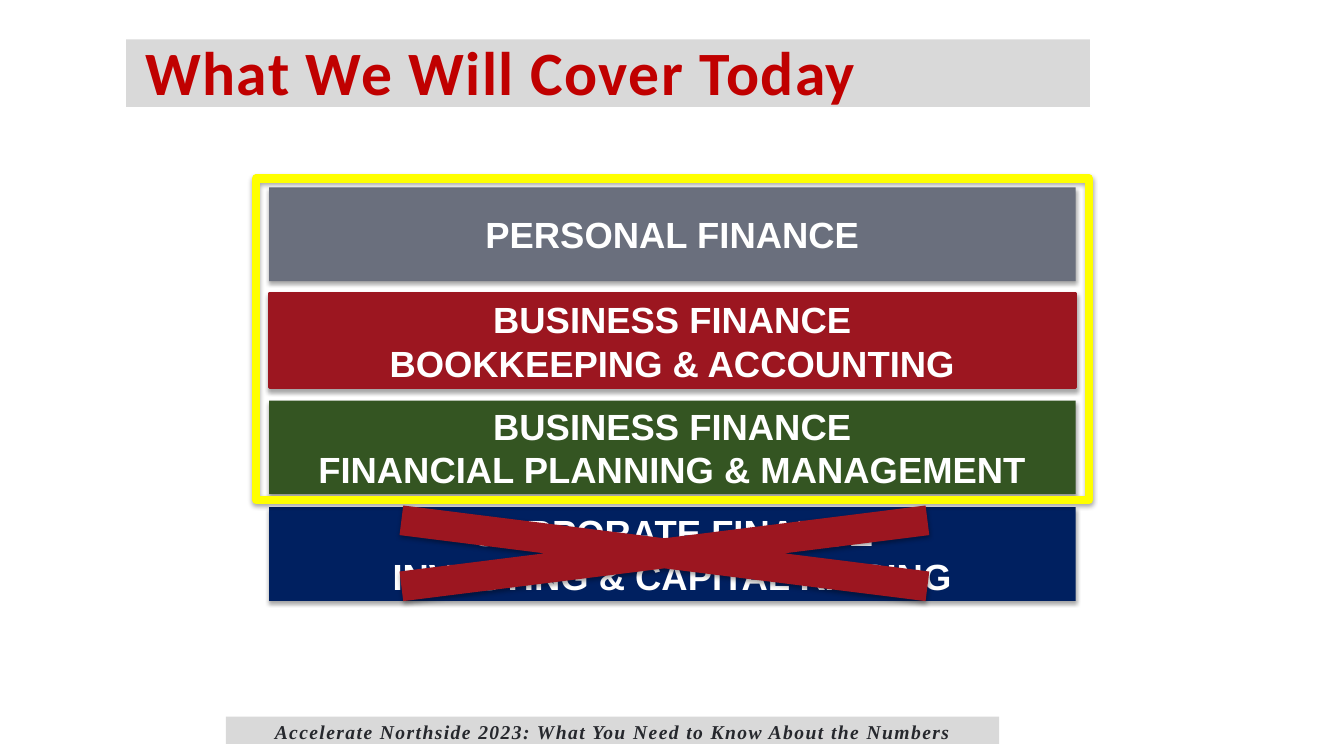
from dataclasses import dataclass

from lxml.etree import SubElement
from pptx import Presentation
from pptx.dml.color import RGBColor
from pptx.enum.shapes import MSO_SHAPE
from pptx.enum.text import MSO_ANCHOR, MSO_AUTO_SIZE, PP_ALIGN
from pptx.oxml.ns import qn
from pptx.util import Inches, Pt


@dataclass(frozen=True)
class Theme:
    grey: str = "6A6F7D"
    red: str = "9C1620"
    green: str = "345522"
    navy: str = "002060"
    yellow: str = "FFFF00"
    white: str = "FFFFFF"
    black: str = "000000"
    band: str = "D9D9D9"
    title: str = "C00000"
    ink: str = "26282D"
    head_size: int = 44
    bar_size: int = 26
    foot_size: int = 14


THEME = Theme()

BARS = [
    ("PERSONAL FINANCE", THEME.grey),
    ("BUSINESS FINANCE\nBOOKKEEPING & ACCOUNTING", THEME.red),
    ("BUSINESS FINANCE\nFINANCIAL PLANNING & MANAGEMENT", THEME.green),
    ("CORPORATE FINANCE\nINVESTING & CAPITAL RAISING", THEME.navy),
]
BAR_TOP, BAR_STEP = 1.86, 1.057


def color(code):
    return RGBColor.from_string(code)


def paint(shape, fill=None, line=None, width=0):
    if fill:
        shape.fill.solid()
        shape.fill.fore_color.rgb = color(fill)
    else:
        shape.fill.background()
    if line:
        shape.line.color.rgb = color(line)
        shape.line.width = Pt(width)
    else:
        shape.line.fill.background()
    shape.shadow.inherit = False


def shade(shape):
    """Give a painted shape a soft shadow straight below it."""
    effects = shape._element.spPr.find(qn("a:effectLst"))
    outer = SubElement(effects, qn("a:outerShdw"), blurRad=str(Pt(3.1)),
                       dist=str(Pt(1.8)), dir="5400000", rotWithShape="0")
    tint = SubElement(outer, qn("a:srgbClr"), val=THEME.black)
    SubElement(tint, qn("a:alpha"), val="35000")


def add_form(slide, kind, box, fill=None, line=None, width=0):
    shape = slide.shapes.add_shape(kind, *map(Inches, box))
    paint(shape, fill, line, width)
    return shape


def write(shape, text, font, size, ink, align, italic=False, space=0):
    """Set bold text; space is the gap between letters in points."""
    frame = shape.text_frame
    frame.word_wrap = True
    frame.text = text
    for para in frame.paragraphs:
        para.alignment = align
        for run in para.runs:
            run.font.name = font
            run.font.size = Pt(size)
            run.font.bold = True
            run.font.italic = italic
            run.font.color.rgb = color(ink)
            if space:
                run._r.get_or_add_rPr().set("spc", str(space * 100))


def inset(shape, left, top):
    """Hang tight text from the top left of its band."""
    frame = shape.text_frame
    frame.auto_size = MSO_AUTO_SIZE.NONE
    frame.vertical_anchor = MSO_ANCHOR.TOP
    frame.margin_left, frame.margin_top = Inches(left), Inches(top)
    frame.margin_right = frame.margin_bottom = 0
    frame.paragraphs[0].line_spacing = 0.8


def add_title(slide, text):
    title = slide.shapes.title
    title.left, title.top = Inches(1.25), Inches(0.39)
    title.width, title.height = Inches(9.56), Inches(0.67)
    paint(title, THEME.band)
    write(title, text, "Calibri", THEME.head_size, THEME.title,
          PP_ALIGN.LEFT, space=1)
    inset(title, 0.19, 0.09)


def add_bar(slide, top, text, fill):
    edge = fill if fill == THEME.red else None
    bar = add_form(slide, MSO_SHAPE.RECTANGLE, (2.67, top, 8, 0.93),
                   fill, edge, 2.25)
    shade(bar)
    bar.text_frame.vertical_anchor = MSO_ANCHOR.MIDDLE
    write(bar, text, "Arial", THEME.bar_size, THEME.white, PP_ALIGN.CENTER)


def add_foot(slide, text):
    foot = add_form(slide, MSO_SHAPE.RECTANGLE, (2.24, 7.11, 7.67, 0.27),
                    THEME.band)
    write(foot, text, "Times New Roman", THEME.foot_size, THEME.ink,
          PP_ALIGN.CENTER, italic=True, space=1)
    inset(foot, 0, 0.08)


def main():
    deck = Presentation()
    deck.slide_width, deck.slide_height = Inches(13.33), Inches(7.5)
    slide = deck.slides.add_slide(deck.slide_layouts[5])
    add_title(slide, "What We Will Cover Today")
    for row, (text, fill) in enumerate(BARS):
        add_bar(slide, BAR_TOP + row * BAR_STEP, text, fill)
    frame = add_form(slide, MSO_SHAPE.RECTANGLE, (2.54, 1.77, 8.26, 3.19),
                     line=THEME.yellow, width=6)
    cross = add_form(slide, MSO_SHAPE.MATH_MULTIPLY,
                     (1.57, 4.86, 10.04, 1.26), THEME.red)
    for mark in (frame, cross):
        shade(mark)
    add_foot(slide, "Accelerate Northside 2023: "
                    "What You Need to Know About the Numbers")
    deck.save("out.pptx")


if __name__ == "__main__":
    main()
